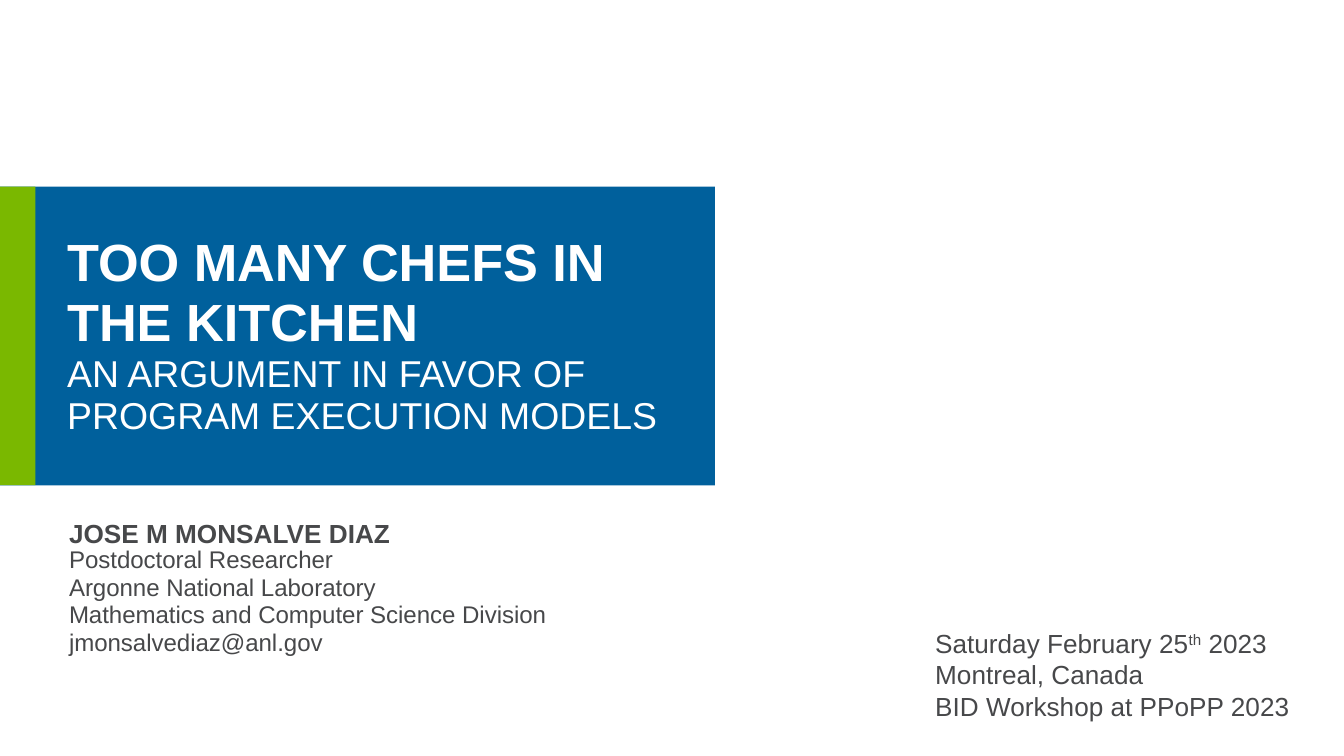
from lxml import etree
from pptx import Presentation
from pptx.dml.color import RGBColor
from pptx.enum.shapes import MSO_SHAPE
from pptx.enum.text import MSO_ANCHOR, MSO_AUTO_SIZE, PP_ALIGN
from pptx.oxml.ns import qn
from pptx.util import Pt

BLUE = RGBColor(0x00, 0x60, 0x9C)
GREEN = RGBColor(0x7A, 0xB8, 0x00)
WHITE = RGBColor(0xFF, 0xFF, 0xFF)
GRAY = RGBColor(0x47, 0x48, 0x4A)
RECTANGLE = MSO_SHAPE.RECTANGLE
TOP, MIDDLE, BOTTOM = MSO_ANCHOR.TOP, MSO_ANCHOR.MIDDLE, MSO_ANCHOR.BOTTOM
LEFT = PP_ALIGN.LEFT
NO_AUTOFIT = MSO_AUTO_SIZE.NONE
BAND_TOP, BAND_HEIGHT = Pt(100), Pt(160)


def set_frame(shape, box, anchor, margins):
    shape.left, shape.top, shape.width, shape.height = [Pt(v) for v in box]
    tf = shape.text_frame
    tf.word_wrap = True
    tf.auto_size = NO_AUTOFIT
    tf.vertical_anchor = anchor
    tf.margin_left, tf.margin_top, tf.margin_right, tf.margin_bottom = [Pt(v) for v in margins]
    return tf


def add_run(p, text, size, color, bold=False):
    r = p.add_run()
    r.text = text
    r.font.name = "Arial"
    r.font.size = Pt(size)
    r.font.bold = bold
    r.font.color.rgb = color
    return r


prs = Presentation()
prs.slide_width, prs.slide_height = Pt(720), Pt(405)
s = prs.slides.add_slide(prs.slide_layouts[1])

title = s.shapes.title
tf = set_frame(title, (0, 100, 383, 160), MIDDLE, (36, 0, 7.2, 0))
title.fill.solid()
title.fill.fore_color.rgb = BLUE
p = tf.paragraphs[0]
p.alignment = LEFT
p.line_spacing = 0.95
add_run(p, "TOO MANY CHEFS IN THE KITCHEN", 28, WHITE, True)
p.add_line_break()
etree.SubElement(p._p.find(qn("a:br")), qn("a:rPr"), sz="2800")
add_run(p, "AN ARGUMENT IN FAVOR OF PROGRAM EXECUTION MODELS", 20, WHITE)

accent = s.shapes.add_shape(RECTANGLE, 0, BAND_TOP, Pt(19), BAND_HEIGHT)
accent.shadow.inherit = False
accent.fill.solid()
accent.fill.fore_color.rgb = GREEN
accent.line.fill.background()

name = s.shapes.add_textbox(0, 0, 0, 0)
tf = set_frame(name, (37, 271, 212, 23), BOTTOM, (0, 0, 0, 0))
add_run(tf.paragraphs[0], "JOSE M MONSALVE DIAZ", 14, GRAY, True)

details = s.placeholders[1]
tf = set_frame(details, (37, 293, 273, 72), TOP, (0, 0, 0, 3.6))
lines = [
    "Postdoctoral Researcher",
    "Argonne National Laboratory",
    "Mathematics and Computer Science Division",
    "jmonsalvediaz@anl.gov",
]
for i, line in enumerate(lines):
    p = tf.add_paragraph() if i else tf.paragraphs[0]
    pPr = p._p.get_or_add_pPr()
    pPr.set("marL", "0")
    pPr.set("indent", "0")
    etree.SubElement(pPr, qn("a:buNone"))
    p.space_before = Pt(0)
    p.line_spacing = 0.95
    add_run(p, line, 12.9, GRAY)

event = s.shapes.add_textbox(0, 0, 0, 0)
tf = set_frame(event, (501, 329, 212, 61), BOTTOM, (0, 0, 0, 3.6))
p = tf.paragraphs[0]
add_run(p, "Saturday February 25", 14, GRAY)
ordinal = add_run(p, "th", 14, GRAY)
ordinal.font._element.set("baseline", "30000")
add_run(p, " 2023", 14, GRAY)
for line in ["Montreal, Canada", "BID Workshop at PPoPP 2023"]:
    add_run(tf.add_paragraph(), line, 14, GRAY)

prs.save("out.pptx")
